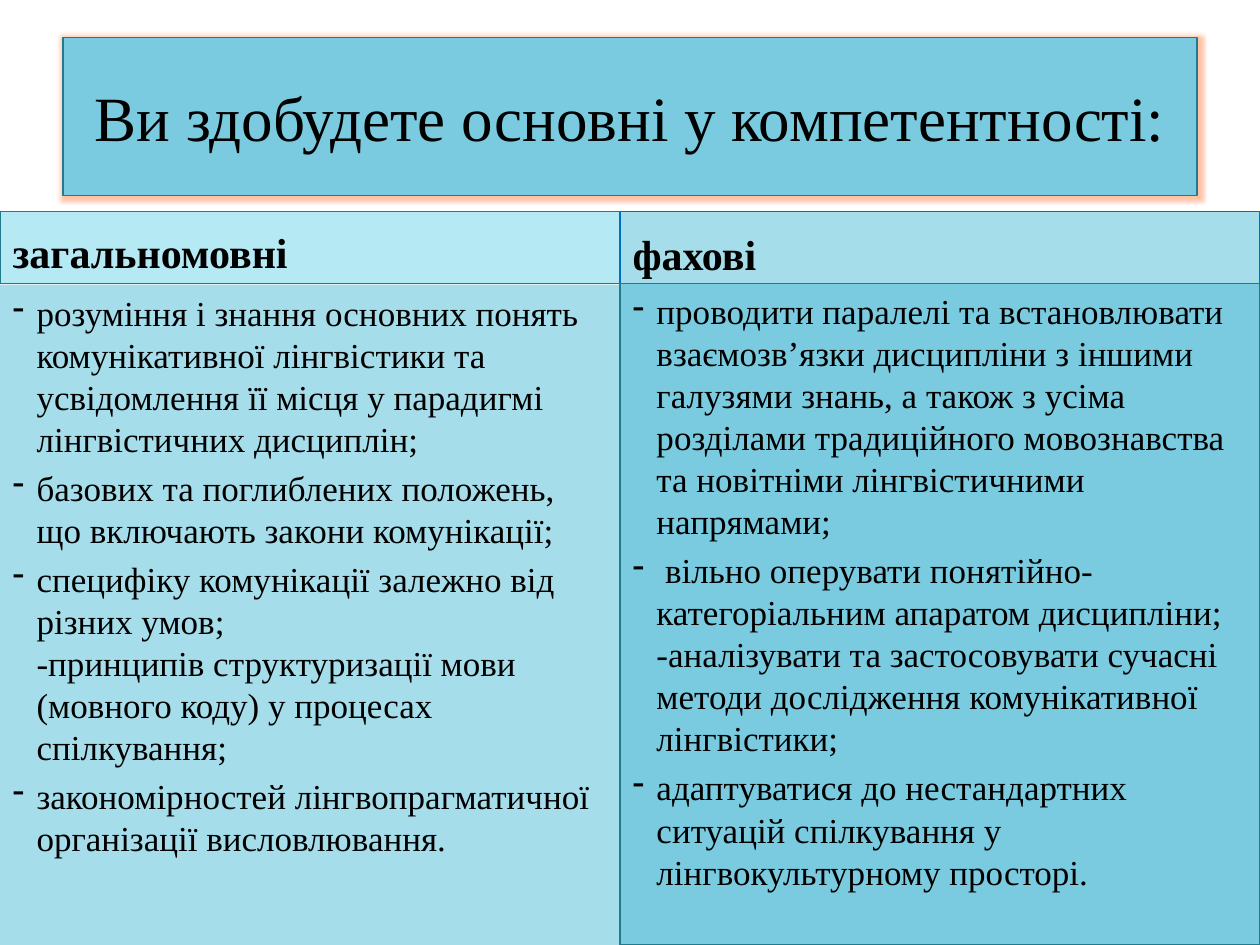
from dataclasses import dataclass
from typing import Optional

from lxml.etree import SubElement
from pptx import Presentation
from pptx.dml.color import RGBColor as RGB
from pptx.enum.text import MSO_ANCHOR as Anchor, MSO_AUTO_SIZE as AutoSize, PP_ALIGN as Align
from pptx.oxml.ns import qn
from pptx.util import Inches, Pt


@dataclass(frozen=True)
class Theme:
    font: str = "Times New Roman"
    text: str = "000000"
    strong: str = "7ACBE0"
    soft: str = "A6DDEA"
    pale: str = "B5E9F4"
    edge: str = "227A8F"
    blue_edge: str = "0070C0"
    glow: str = "FF6820"
    title_size: int = 36
    head_size: int = 24
    list_size: int = 20


@dataclass(frozen=True)
class Panel:
    idx: int
    box: tuple[float, float, float, float]
    fill: str
    line: Optional[str]
    size: int
    anchor: Anchor
    paragraphs: tuple[str, ...]
    bold: bool = False
    bullets: bool = False
    align: Align = Align.LEFT


T = Theme()
SPLIT, HEAD_TOP, LIST_TOP = 4.92, 1.68, 2.25
WIDTH, HEIGHT = 10, 7.5
RIGHT_WIDTH = WIDTH - SPLIT

GENERAL = (
    "розуміння і знання основних понять комунікативної лінгвістики та усвідомлення "
    "її місця у парадигмі лінгвістичних дисциплін;",
    "базових та поглиблених положень, що включають закони комунікації;",
    "специфіку комунікації залежно від різних умов;\n"
    "-принципів структуризації мови (мовного коду) у процесах спілкування;",
    "закономірностей лінгвопрагматичної організації висловлювання.",
)
PROFESSIONAL = (
    "проводити паралелі та встановлювати взаємозв’язки дисципліни з іншими галузями "
    "знань, а також з усіма розділами традиційного мовознавства та новітніми "
    "лінгвістичними напрямами;",
    " вільно оперувати понятійно-категоріальним апаратом дисципліни;\n"
    "-аналізувати та застосовувати сучасні методи дослідження комунікативної лінгвістики;",
    "адаптуватися до нестандартних ситуацій спілкування у лінгвокультурному просторі.",
)

PANELS = (
    Panel(0, (0.5, 0.3, 9, 1.25), T.strong, T.edge, T.title_size, Anchor.MIDDLE,
          ("Ви здобудете основні у компетентності:",), align=Align.CENTER),
    Panel(1, (0, HEAD_TOP, SPLIT, 0.57), T.pale, T.edge, T.head_size, Anchor.BOTTOM,
          ("загальномовні",), bold=True),
    Panel(2, (0, LIST_TOP + 0.01, SPLIT, HEIGHT - LIST_TOP - 0.01), T.soft, None,
          T.list_size, Anchor.TOP, GENERAL, bullets=True),
    Panel(3, (SPLIT, HEAD_TOP, RIGHT_WIDTH, 0.58), T.soft, T.blue_edge, T.head_size,
          Anchor.BOTTOM, ("фахові",), bold=True),
    Panel(4, (SPLIT, LIST_TOP, RIGHT_WIDTH, HEIGHT - LIST_TOP), T.strong, T.edge,
          T.list_size, Anchor.TOP, PROFESSIONAL, bullets=True),
)


def add_dash_bullet(p) -> None:
    pPr = p._p.get_or_add_pPr()
    pPr.set("marL", str(Inches(0.19)))
    pPr.set("indent", str(Inches(-0.19)))
    SubElement(pPr, qn("a:buFontTx"))
    SubElement(pPr, qn("a:buChar"), char="-")


def add_glow(sp) -> None:
    effects = SubElement(sp._element.spPr, qn("a:effectLst"))
    glow = SubElement(effects, qn("a:glow"), rad=str(Pt(5)))
    color = SubElement(glow, qn("a:srgbClr"), val=T.glow)
    SubElement(color, qn("a:alpha"), val="40000")


def fill_panel(sp, panel: Panel) -> None:
    for name, value in zip(("left", "top", "width", "height"), panel.box):
        setattr(sp, name, Inches(value))
    sp.fill.solid()
    sp.fill.fore_color.rgb = RGB.from_string(panel.fill)
    if panel.line:
        sp.line.color.rgb = RGB.from_string(panel.line)
        sp.line.width = Pt(0.75)
    else:
        sp.line.fill.background()

    tf = sp.text_frame
    frame_format = {"word_wrap": True, "auto_size": AutoSize.NONE,
                    "vertical_anchor": panel.anchor}
    for name, value in frame_format.items():
        setattr(tf, name, value)
    font_format = {"name": T.font, "size": Pt(panel.size), "bold": panel.bold}
    for i, text in enumerate(panel.paragraphs):
        p = tf.paragraphs[0] if i == 0 else tf.add_paragraph()
        p.text = text
        p.alignment = panel.align
        p.space_before = Pt(0.2 * panel.size if i else 0)
        if panel.bullets:
            add_dash_bullet(p)
        for r in p.runs:
            for name, value in font_format.items():
                setattr(r.font, name, value)
            r.font.color.rgb = RGB.from_string(T.text)


def main() -> None:
    prs = Presentation()
    prs.slide_width, prs.slide_height = Inches(WIDTH), Inches(HEIGHT)
    comparison = prs.slide_layouts.get_by_name("Comparison")
    slide = prs.slides.add_slide(comparison)
    holders = {sp.placeholder_format.idx: sp for sp in slide.placeholders}
    for panel in PANELS:
        fill_panel(holders[panel.idx], panel)
    add_glow(slide.shapes.title)
    prs.save("out.pptx")


if __name__ == "__main__":
    main()
